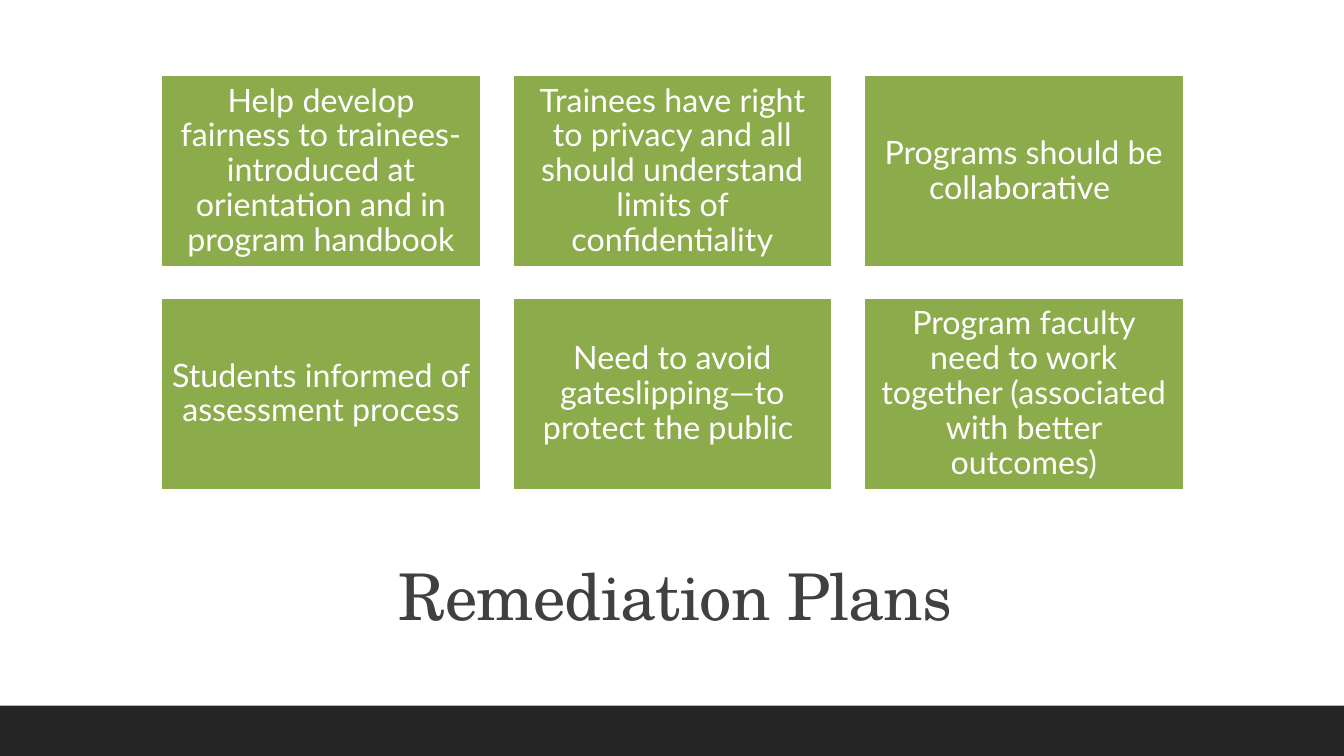
from dataclasses import dataclass

from pptx import Presentation
from pptx.dml.color import RGBColor as Rgb
from pptx.enum.shapes import MSO_SHAPE as Form
from pptx.enum.text import MSO_ANCHOR as Anchor, MSO_AUTO_SIZE as Fit, PP_ALIGN as Align
from pptx.shapes.autoshape import Shape
from pptx.slide import Slide
from pptx.text.text import TextFrame, _Run as Run
from pptx.util import Inches, Pt


@dataclass(frozen=True)
class Theme:
    """Colours, fonts and type sizes of the slide."""
    paper: str = "FFFFFF"
    green: str = "8CAB4A"
    band: str = "262626"
    ink: str = "404040"
    head: str = "TeX Gyre Schola"
    body: str = "Lato"
    big: float = 46
    small: float = 23
    edge: float = 1.25


@dataclass(frozen=True)
class Box:
    left: float
    top: float
    width: float
    height: float

    def place(self, shape: Shape) -> None:
        shape.left, shape.top = Inches(self.left), Inches(self.top)
        shape.width, shape.height = Inches(self.width), Inches(self.height)


@dataclass(frozen=True)
class Grid:
    """Equal cells; a step is the pitch from one cell to the next."""
    left: float
    top: float
    width: float
    height: float
    across: float
    down: float

    def cell(self, col: int, row: int) -> Box:
        return Box(self.left + col * self.across, self.top + row * self.down,
                   self.width, self.height)


@dataclass(frozen=True)
class Card:
    col: int
    row: int
    text: str


WIDE, HIGH = 13.33, 7.5
THEME = Theme()
GRID = Grid(1.6, 0.75, 3.17, 1.9, 3.485, 2.21)
TITLE = Box(1.2, 5.3, 11, 1.3)
BAND = Box(0, 7, WIDE, HIGH - 7)
CARDS = [
    Card(0, 0, "Help develop fairness to trainees-introduced at orientation and in program handbook"),
    Card(1, 0, "Trainees have right to privacy and all should understand limits of confidentiality"),
    Card(2, 0, "Programs should be collaborative "),
    Card(0, 1, "Students informed of assessment process"),
    Card(1, 1, "Need to avoid gateslipping—to protect the public "),
    Card(2, 1, "Program faculty need to work together (associated with better outcomes)"),
]


def write(frame: TextFrame, text: str, face: str, size: float, tint: str) -> Run:
    """Put one centred run in the frame and return it."""
    frame.word_wrap = True
    frame.auto_size = Fit.NONE
    frame.vertical_anchor = Anchor.MIDDLE
    frame.margin_left = frame.margin_right = Inches(0.1)
    para = frame.paragraphs[0]
    para.alignment = Align.CENTER
    para.line_spacing = 0.9
    run = para.add_run()
    run.text = text
    run.font.name = face
    run.font.size = Pt(size)
    run.font.color.rgb = Rgb.from_string(tint)
    return run


def block(slide: Slide, box: Box, tint: str) -> Shape:
    shape = slide.shapes.add_shape(Form.RECTANGLE, 0, 0, 0, 0)
    box.place(shape)
    shape.shadow.inherit = False
    shape.fill.solid()
    shape.fill.fore_color.rgb = Rgb.from_string(tint)
    shape.line.fill.background()
    return shape


def draw_title(slide: Slide) -> None:
    title = slide.shapes.title
    TITLE.place(title)
    run = write(title.text_frame, "Remediation Plans", THEME.head, THEME.big, THEME.ink)
    run.font._element.set("spc", "-50")


def draw_card(slide: Slide, card: Card) -> None:
    shape = block(slide, GRID.cell(card.col, card.row), THEME.green)
    shape.line.color.rgb = Rgb.from_string(THEME.paper)
    shape.line.width = Pt(THEME.edge)
    frame = shape.text_frame
    frame.margin_top = frame.margin_bottom = Inches(0.1)
    write(frame, card.text, THEME.body, THEME.small, THEME.paper)


def main() -> None:
    deck = Presentation()
    deck.slide_width, deck.slide_height = Inches(WIDE), Inches(HIGH)
    slide = deck.slides.add_slide(deck.slide_layouts[5])
    slide.background.fill.solid()
    slide.background.fill.fore_color.rgb = Rgb.from_string(THEME.paper)
    draw_title(slide)
    block(slide, BAND, THEME.band)
    for card in CARDS:
        draw_card(slide, card)
    deck.save("out.pptx")


if __name__ == "__main__":
    main()
